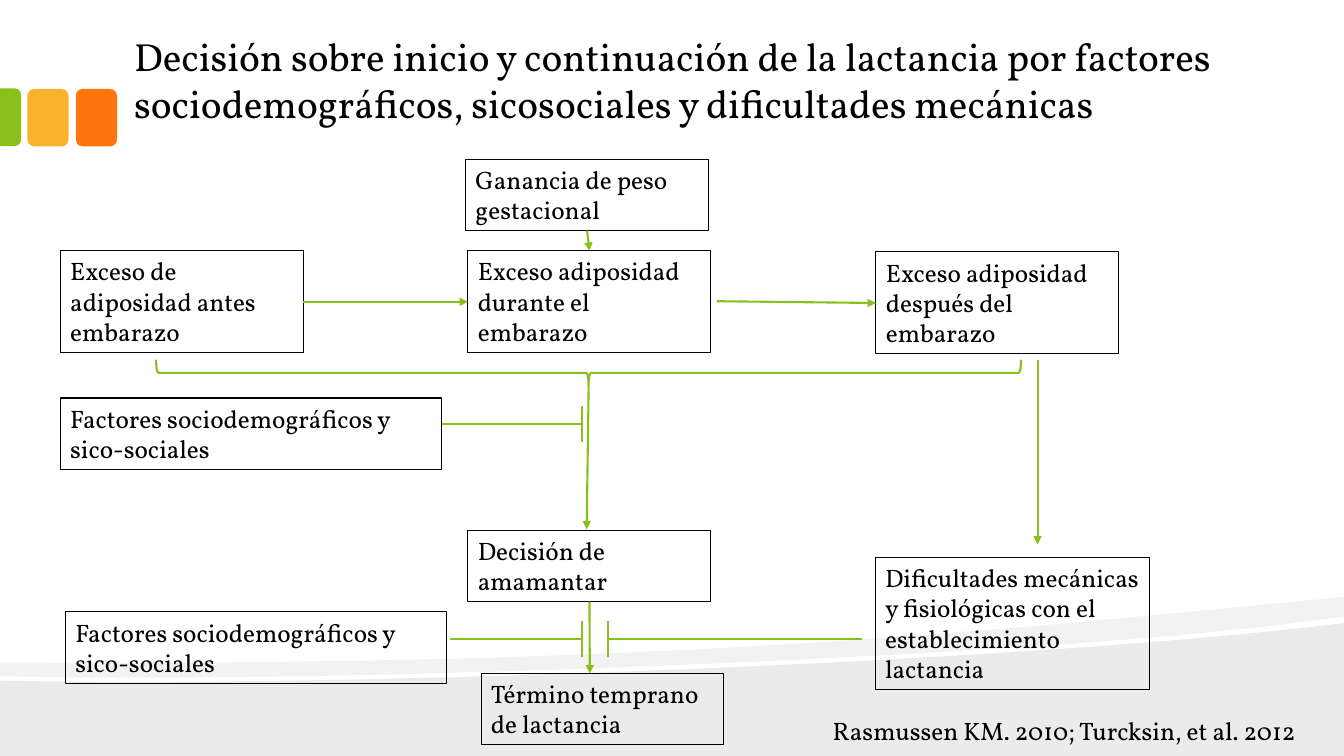
"""Build the slide on factors behind starting and continuing breastfeeding."""
from lxml.etree import SubElement
from pptx import Presentation
from pptx.dml.color import RGBColor
from pptx.enum.shapes import MSO_CONNECTOR as Link, MSO_SHAPE as Shape
from pptx.enum.text import MSO_ANCHOR as Anchor, MSO_AUTO_SIZE as AutoSize, PP_ALIGN as Align
from pptx.oxml.ns import qn
from pptx.util import Cm, Pt

FONT = "Vollkorn"
COLORS = {"ink": "000000", "green": "89C01C", "yellow": "FCB22C", "orange": "FE750E"}
TITLE = ("Decisión sobre inicio y continuación de la lactancia por factores "
         "sociodemográficos, sicosociales y dificultades mecánicas")
CITATION = "Rasmussen KM. 2010; Turcksin, et al. 2012"
SOCIAL = "Factores sociodemográficos y sico-sociales"

BOXES = {
    "gain": ("Ganancia de peso gestacional", 11.73, 4.01, 6.12, 1.8),
    "before": ("Exceso de adiposidad antes embarazo", 1.52, 6.32, 6.12, 2.57),
    "during": ("Exceso adiposidad durante el embarazo", 11.79, 6.32, 6.12, 2.57),
    "after": ("Exceso adiposidad después del embarazo", 22.07, 6.35, 6.12, 2.57),
    "social_start": (SOCIAL, 1.52, 10.03, 9.6, 1.8),
    "difficulties": ("Dificultades mecánicas y fisiológicas con el establecimiento lactancia",
                     22.05, 14.05, 6.91, 3.33),
    "end": ("Término temprano de lactancia", 12.12, 16.97, 6.12, 1.8),
    "decision": ("Decisión de amamantar", 11.79, 13.36, 6.12, 1.8),
    "social_end": (SOCIAL, 1.65, 15.42, 9.6, 1.8),
}
TOP, LEFT, BOTTOM, RIGHT = range(4)
ARROWS = [
    (("gain", BOTTOM), ("during", TOP)),
    (("before", RIGHT), ("during", LEFT)),
    ((18.06, 7.59), ("after", LEFT)),
    ((14.83, 9.73), (14.78, 13.34)),
    (("decision", BOTTOM), (14.86, 16.97)),
    ((26.14, 9.07), (26.14, 13.72)),
]
BARRIERS = [(14.66, 10.69, 11.13), (14.66, 16.1, 11.33), (15.32, 16.1, 21.72)]
HALF_BAR = 0.45
TILES = [
    (Shape.ROUNDED_RECTANGLE, "orange", (1.91, 2.24, 1.04, 1.45), 0),
    (Shape.ROUNDED_RECTANGLE, "yellow", (0.69, 2.24, 1.04, 1.45), 0),
    (Shape.ROUND_2_SAME_RECTANGLE, "green", (-0.46, 2.69, 1.45, 0.53), 90),
]
WAVES = [
    (8, [(33.86, 15.7), (33.86, 19.05), (0, 19.05), (0, 17.15),
         ((8.94, 17.35), (26.47, 16.64), (33.86, 15.7))]),
    (5, [(33.86, 15.04), (33.86, 15.54),
         ((31.88, 15.82), (29.18, 16.08), (26.14, 16.28)),
         ((17.73, 16.84), (6.55, 17.2), (0, 17.04)), (0, 16.69),
         ((16.56, 16.81), (24.66, 15.93), (33.86, 15.04))]),
]
CURVE_STEPS = 24


def color(name):
    return RGBColor.from_string(COLORS[name])


def lengths(values):
    return [Cm(value) for value in values]


def place(shape, frame):
    shape.left, shape.top, shape.width, shape.height = lengths(frame)


def write(shape, text, size, anchor=Anchor.TOP):
    frame = shape.text_frame
    frame.text = text
    frame.word_wrap = True
    frame.auto_size = AutoSize.NONE
    frame.vertical_anchor = anchor
    para = frame.paragraphs[0]
    para.alignment = Align.LEFT
    font = para.runs[0].font
    font.name, font.size, font.color.rgb = FONT, Pt(size), color("ink")


def outline(shape, name, width):
    shape.line.color.rgb = color(name)
    shape.line.width = Pt(width)


def flatten(steps):
    points = []
    for step in steps:
        if len(step) == 2:
            points.append(step)
            continue
        corners = (points[-1], *step)
        for index in range(1, CURVE_STEPS + 1):
            t = index / CURVE_STEPS
            weights = ((1 - t) ** 3, 3 * t * (1 - t) ** 2, 3 * t ** 2 * (1 - t), t ** 3)
            points.append(tuple(sum(w * corner[axis] for w, corner in zip(weights, corners))
                                for axis in (0, 1)))
    return points


def add_wave(slide, opacity, steps):
    points = [lengths(point) for point in flatten(steps)]
    builder = slide.shapes.build_freeform(*points[0])
    builder.add_line_segments(points[1:], close=True)
    wave = builder.convert_to_shape()
    wave.shadow.inherit = False
    wave.fill.solid()
    wave.fill.fore_color.rgb = color("ink")
    wave.line.fill.background()
    tint = wave.fill._xPr.find(qn("a:solidFill"))[0]
    SubElement(tint, qn("a:alpha"), val=str(opacity * 1000))


def add_tile(slide, kind, name, frame, rotation):
    tile = slide.shapes.add_shape(kind, *lengths(frame))
    tile.shadow.inherit = False
    tile.rotation = rotation
    tile.fill.solid()
    tile.fill.fore_color.rgb = color(name)
    tile.line.fill.background()
    if rotation:
        tile.adjustments[0] = 0.292


def add_box(slide, text, *frame):
    box = slide.shapes.add_shape(Shape.RECTANGLE, *lengths(frame))
    box.shadow.inherit = False
    box.fill.background()
    outline(box, "ink", 0.75)
    write(box, text, 18)
    return box


def add_line(slide, start, end, boxes, arrow=False):
    joined = [isinstance(point[0], str) for point in (start, end)]
    ends = [(0, 0) if tied else point for tied, point in zip(joined, (start, end))]
    line = slide.shapes.add_connector(Link.STRAIGHT, *lengths(ends[0] + ends[1]))
    if joined[0]:
        line.begin_connect(boxes[start[0]], start[1])
    if joined[1]:
        line.end_connect(boxes[end[0]], end[1])
    outline(line, "green", 1.5)
    if arrow:
        SubElement(line.line._get_or_add_ln(), qn("a:tailEnd"), type="triangle")
    SubElement(line._element.spPr, qn("a:effectLst"))


def main():
    deck = Presentation()
    deck.slide_width, deck.slide_height = Cm(33.86), Cm(19.05)
    slide = deck.slides.add_slide(deck.slide_layouts[5])
    for wave in WAVES:
        add_wave(slide, *wave)
    for tile in TILES:
        add_tile(slide, *tile)

    title = slide.shapes.title
    place(title, (3.05, -0.25, 30, 3.61))
    write(title, TITLE, 28, Anchor.BOTTOM)
    frame = title.text_frame
    frame.margin_left = frame.margin_right = Cm(0.33)
    frame.margin_top = frame.margin_bottom = Cm(0.18)

    boxes = {name: add_box(slide, *content) for name, content in BOXES.items()}
    citation = slide.shapes.add_textbox(*lengths((20.73, 17.91, 13.13, 1.1)))
    write(citation, CITATION, 18)

    brace = slide.shapes.add_shape(Shape.LEFT_BRACE, *lengths((14.5, -1.5, 0.66, 21.79)))
    brace.shadow.inherit = False
    brace.rotation = 270
    brace.fill.background()
    outline(brace, "green", 1.5)

    for start, end in ARROWS:
        add_line(slide, start, end, boxes, arrow=True)
    for x, y, origin in BARRIERS:
        add_line(slide, (x, y - HALF_BAR), (x, y + HALF_BAR), boxes)
        add_line(slide, (x, y), (origin, y), boxes)
    deck.save("out.pptx")


if __name__ == "__main__":
    main()
